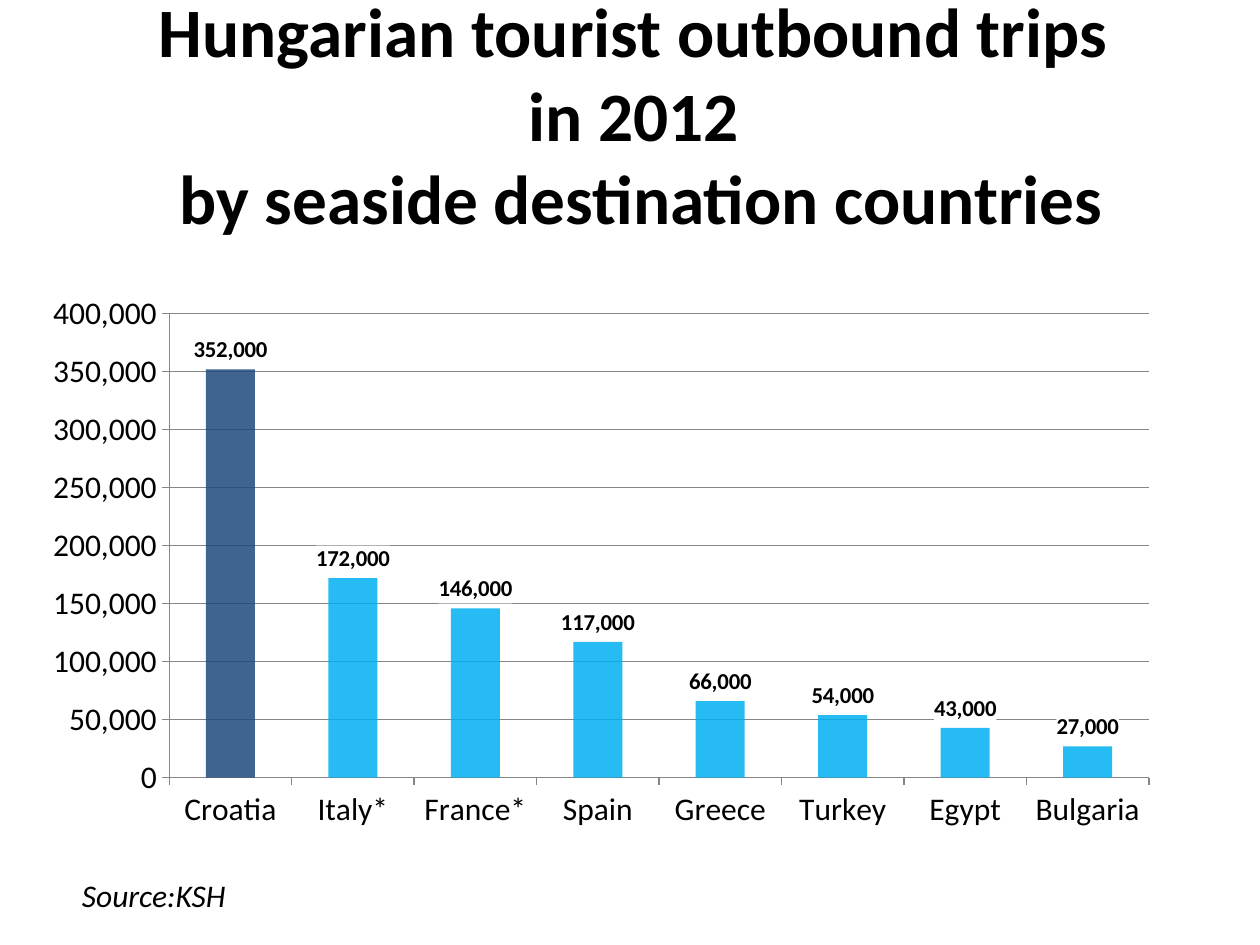
from typing import NamedTuple

from lxml.etree import SubElement
from pptx import Presentation
from pptx.chart.data import CategoryChartData
from pptx.dml.color import RGBColor
from pptx.enum.chart import XL_CHART_TYPE, XL_LABEL_POSITION, XL_TICK_MARK
from pptx.enum.text import MSO_ANCHOR, MSO_AUTO_SIZE, PP_ALIGN
from pptx.oxml import parse_xml
from pptx.oxml.ns import nsdecls, qn
from pptx.util import Inches, Pt

COLORS = {"text": "000000", "bar": "00B0F0", "highlight": "1F497D",
          "line": "868686", "label": "FFFFFF"}
FONT = "Calibri"


class Box(NamedTuple):
    """Left, top, width and height as shares of the slide."""
    left: float
    top: float
    width: float
    height: float


class Trips(NamedTuple):
    country: str
    count: int


TITLE_BOX = Box(0.059, 0, 0.9, 0.24)
CHART_BOX = Box(0.02, 0.237, 0.9, 0.66)
SOURCE_BOX = Box(0.028, 0.92, 0.205, 0.053)
PLOT = Box(0.127, 0.144, 0.864, 0.744)  # shares of the chart

TRIPS = [
    Trips("Croatia", 352000), Trips("Italy*", 172000),
    Trips("France*", 146000), Trips("Spain", 117000),
    Trips("Greece", 66000), Trips("Turkey", 54000),
    Trips("Egypt", 43000), Trips("Bulgaria", 27000),
]


def rgb(name: str) -> RGBColor:
    return RGBColor.from_string(COLORS[name])


def place(prs, box: Box) -> list[int]:
    w, h = prs.slide_width, prs.slide_height
    return [int(box.left * w), int(box.top * h),
            int(box.width * w), int(box.height * h)]


def style_font(font, size: float, bold: bool = False, italic: bool = False) -> None:
    font.name, font.size = FONT, Pt(size)
    font.bold, font.italic = bold, italic
    font.color.rgb = rgb("text")


def fill_bar(fmt, color: str, opacity: int = 85) -> None:
    fmt.fill.solid()
    fmt.fill.fore_color.rgb = rgb(color)
    for clr in fmt.fill._xPr.iter(qn("a:srgbClr")):
        SubElement(clr, qn("a:alpha"), val=str(opacity * 1000))


def style_line(line) -> None:
    line.color.rgb = rgb("line")
    line.width = Pt(0.75)


def add_title(prs, s) -> None:
    sp = s.shapes.title
    sp.left, sp.top, sp.width, sp.height = place(prs, TITLE_BOX)
    tf = sp.text_frame
    tf.text = ("Hungarian tourist outbound trips \vin 2012 \v"
               "by seaside destination countries")
    tf.auto_size = MSO_AUTO_SIZE.NONE
    tf.vertical_anchor = MSO_ANCHOR.MIDDLE
    p = tf.paragraphs[0]
    p.alignment = PP_ALIGN.CENTER
    for r in p.runs:
        style_font(r.font, 39.6, bold=True)


def set_plot_layout(chart, box: Box) -> None:
    plot_area = chart._chartSpace.chart.plotArea
    for old in plot_area.findall(qn("c:layout")):
        plot_area.remove(old)
    sizes = "".join(f'<c:{tag} val="{val}"/>' for tag, val in zip("xywh", box))
    plot_area.insert(0, parse_xml(
        f'<c:layout {nsdecls("c")}><c:manualLayout>'
        '<c:layoutTarget val="inner"/><c:xMode val="edge"/><c:yMode val="edge"/>'
        f'{sizes}</c:manualLayout></c:layout>'))


def add_labels(plot) -> None:
    labels = plot.series[0].data_labels
    labels.show_value = True
    labels.position = XL_LABEL_POSITION.OUTSIDE_END
    labels.number_format = "#,##0;\\-#,##0"
    labels.number_format_is_linked = False
    style_font(labels.font, 13, bold=True)
    # White backing keeps the gridlines off the figures
    labels._element.find(qn("c:txPr")).addprevious(parse_xml(
        f'<c:spPr {nsdecls("c", "a")}><a:solidFill>'
        f'<a:srgbClr val="{COLORS["label"]}"/></a:solidFill></c:spPr>'))


def add_trips_chart(prs, s) -> None:
    data = CategoryChartData(number_format="#,##0")
    data.categories = [t.country for t in TRIPS]
    data.add_series("Series 1", [t.count for t in TRIPS])
    chart = s.shapes.add_chart(XL_CHART_TYPE.COLUMN_CLUSTERED,
                               *place(prs, CHART_BOX), data).chart
    chart.has_legend = chart.has_title = False
    style_font(chart.font, 18)
    set_plot_layout(chart, PLOT)

    # Bars
    plot = chart.plots[0]
    plot.gap_width, plot.vary_by_categories = 150, False
    series = plot.series[0]
    fill_bar(series.format, "bar")
    fill_bar(series.points[0].format, "highlight")
    add_labels(plot)

    # Axes
    for axis in (chart.category_axis, chart.value_axis):
        axis.major_tick_mark = XL_TICK_MARK.OUTSIDE
        style_font(axis.tick_labels.font, 18)
        style_line(axis.format.line)
    values = chart.value_axis
    values.minimum_scale, values.maximum_scale, values.major_unit = 0, 400000, 50000
    values.tick_labels.number_format = "#,##0"
    values.tick_labels.number_format_is_linked = False
    values.has_major_gridlines = True
    style_line(values.major_gridlines.format.line)


def add_source(prs, s) -> None:
    tf = s.shapes.add_textbox(*place(prs, SOURCE_BOX)).text_frame
    tf.word_wrap = True
    tf.margin_left = Inches(0.37)
    tf.text = "Source:KSH"
    style_font(tf.paragraphs[0].runs[0].font, 18, italic=True)


def main() -> None:
    prs = Presentation()
    prs.slide_width, prs.slide_height = Inches(10), Inches(7.5)
    s = prs.slides.add_slide(prs.slide_layouts[5])  # title only
    add_title(prs, s)
    add_trips_chart(prs, s)
    add_source(prs, s)
    prs.save("out.pptx")


if __name__ == "__main__":
    main()
